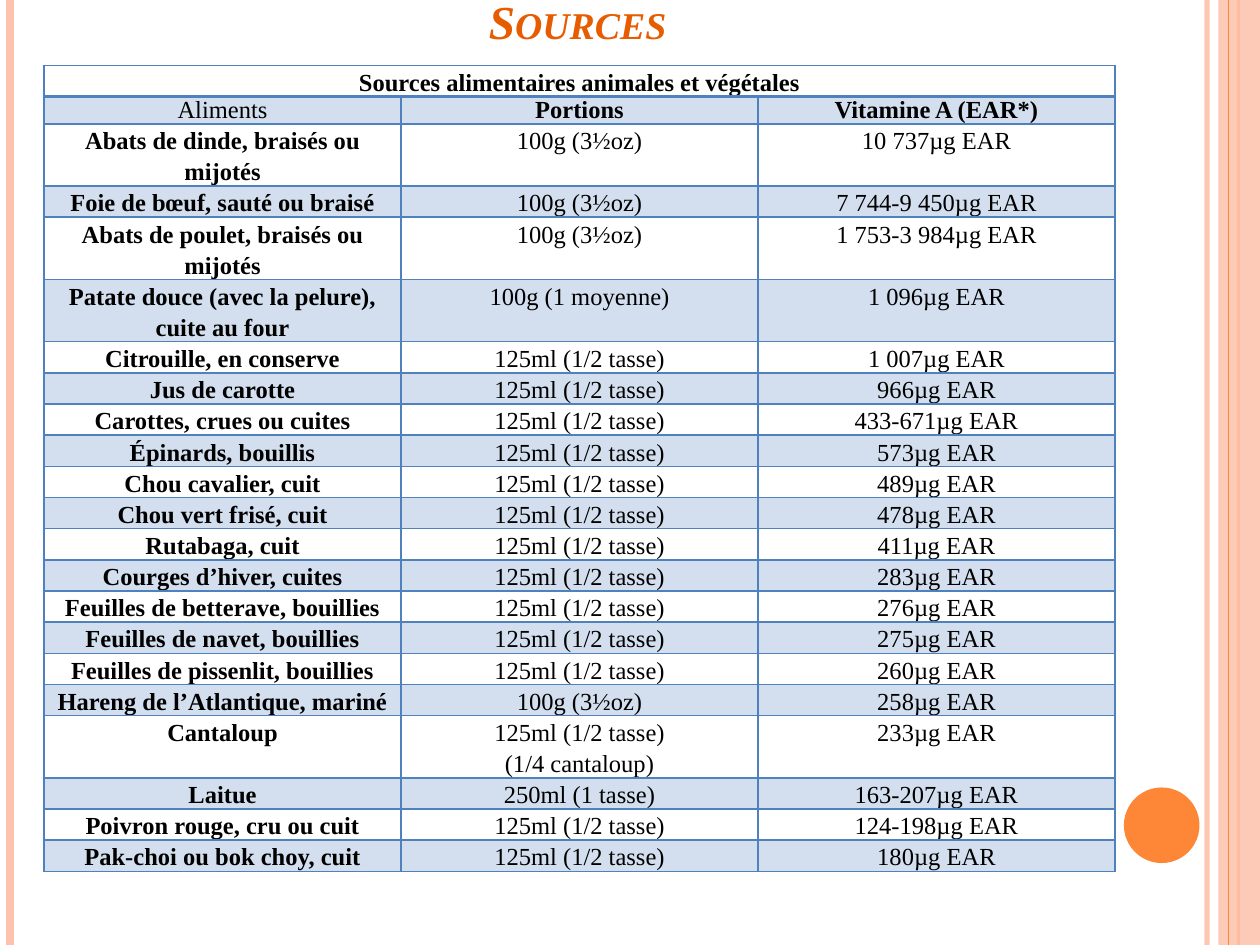
import pptx
import pptx.util
import pptx.dml.color
import pptx.enum.shapes
import pptx.enum.text
import pptx.oxml
import pptx.oxml.ns
from pptx.util import Inches

HALF_CUP = "125ml (1/2 tasse)"
OUNCES = "100g (3½oz)"
CAPTION = "Sources alimentaires animales et végétales"
HEADERS = ("Aliments", "Portions", "Vitamine A (EAR*)")
FOODS = [
    ("Abats de dinde, braisés ou mijotés", OUNCES, "10 737"),
    ("Foie de bœuf, sauté ou braisé", OUNCES, "7 744-9 450"),
    ("Abats de poulet, braisés ou mijotés", OUNCES, "1 753-3 984"),
    ("Patate douce (avec la pelure), cuite au four", "100g (1 moyenne)", "1 096"),
    ("Citrouille, en conserve", HALF_CUP, "1 007"),
    ("Jus de carotte", HALF_CUP, "966"),
    ("Carottes, crues ou cuites", HALF_CUP, "433-671"),
    ("Épinards, bouillis", HALF_CUP, "573"),
    ("Chou cavalier, cuit", HALF_CUP, "489"),
    ("Chou vert frisé, cuit", HALF_CUP, "478"),
    ("Rutabaga, cuit", HALF_CUP, "411"),
    ("Courges d’hiver, cuites", HALF_CUP, "283"),
    ("Feuilles de betterave, bouillies", HALF_CUP, "276"),
    ("Feuilles de navet, bouillies", HALF_CUP, "275"),
    ("Feuilles de pissenlit, bouillies", HALF_CUP, "260"),
    ("Hareng de l’Atlantique, mariné", OUNCES, "258"),
    ("Cantaloup", HALF_CUP + "\n(1/4 cantaloup)", "233"),
    ("Laitue", "250ml (1 tasse)", "163-207"),
    ("Poivron rouge, cru ou cuit", HALF_CUP, "124-198"),
    ("Pak-choi ou bok choy, cuit", HALF_CUP, "180"),
]
TALL_ROWS = {2, 4, 5, 18}


def rgb(value):
    return pptx.dml.color.RGBColor.from_string(value)


class Deck:
    font = "Times New Roman"
    title_color = "E75C01"
    orange = "FE8637"
    peach = "FEC3AE"
    border = "4F81BD"
    band = "D3DFEE"

    def __init__(self):
        self.prs = pptx.Presentation()
        self.prs.slide_width = Inches(10)
        self.prs.slide_height = Inches(7.5)
        self.s = self.prs.slides.add_slide(self.prs.slide_layouts[5])

    def set_alpha(self, shape, percent):
        for clr in shape.element.spPr.iter(pptx.oxml.ns.qn("a:srgbClr")):
            pptx.oxml.ns.qn("a:alpha")
            clr.append(pptx.oxml.parse_xml(
                f'<a:alpha {pptx.oxml.ns.nsdecls("a")} val="{percent * 1000}"/>'))

    def stripe(self, x, color, width, alpha=100):
        c = self.s.shapes.add_connector(
            pptx.enum.shapes.MSO_CONNECTOR.STRAIGHT,
            Inches(x), 0, Inches(x), self.prs.slide_height)
        c.line.color.rgb = rgb(color)
        c.line.width = pptx.util.Pt(width)
        if alpha < 100:
            self.set_alpha(c, alpha)
        c.element.spPr.append(pptx.oxml.parse_xml(
            f'<a:effectLst {pptx.oxml.ns.nsdecls("a")}/>'))

    def shape(self, kind, x, y, w, h, color, alpha=100):
        sp = self.s.shapes.add_shape(kind, Inches(x), Inches(y), Inches(w), Inches(h))
        sp.shadow.inherit = False
        sp.fill.solid()
        sp.fill.fore_color.rgb = rgb(color)
        sp.line.fill.background()
        if alpha < 100:
            self.set_alpha(sp, alpha)

    def run(self, p, text, size, color, bold):
        r = p.add_run()
        r.text = text
        r.font.name = self.font
        r.font.size = pptx.util.Pt(size)
        r.font.bold = bold
        r.font.color.rgb = rgb(color)
        return r

    def title(self, text, x, y, w, h):
        sp = self.s.shapes.title
        sp.left, sp.top, sp.width, sp.height = map(Inches, (x, y, w, h))
        tf = sp.text_frame
        tf.word_wrap = True
        tf.auto_size = pptx.enum.text.MSO_AUTO_SIZE.NONE
        tf.vertical_anchor = pptx.enum.text.MSO_ANCHOR.BOTTOM
        p = tf.paragraphs[0]
        p.alignment = pptx.enum.text.PP_ALIGN.CENTER
        r = self.run(p, text, 27, self.title_color, True)
        r.font.italic = True
        r.font.element.set("cap", "small") if hasattr(r.font, "element") else \
            r._r.get_or_add_rPr().set("cap", "small")

    def borders(self, cell, top=1, bottom=1):
        tc_pr = cell._tc.get_or_add_tcPr()
        for side, width in zip("LRTB", (1, 1, top, bottom)):
            tc_pr.append(pptx.oxml.parse_xml(
                f'<a:ln{side} {pptx.oxml.ns.nsdecls("a")} w="{pptx.util.Pt(width)}">'
                f'<a:solidFill><a:srgbClr val="{self.border}"/></a:solidFill>'
                f'</a:ln{side}>'))

    def cell(self, cell, text, bold, banded, spacing=1.15, after=0, top=1, bottom=1):
        cell.margin_left = cell.margin_right = Inches(0.07)
        cell.margin_top = cell.margin_bottom = 0
        self.borders(cell, top, bottom)
        if banded:
            cell.fill.solid()
            cell.fill.fore_color.rgb = rgb(self.band)
        else:
            cell.fill.background()
        p = cell.text_frame.paragraphs[0]
        p.alignment = pptx.enum.text.PP_ALIGN.CENTER
        p.line_spacing = spacing
        p.space_after = pptx.util.Pt(after)
        for i, line in enumerate(text.split("\n")):
            if i:
                p.add_line_break()
            self.run(p, line, 14, "000000", bold)

    def table(self, x, y, w):
        heights = [0.46 if i in TALL_ROWS else 0.22 for i in range(len(FOODS) + 2)]
        heights[1] = 0.21
        table = self.s.shapes.add_table(
            len(heights), 3, Inches(x), Inches(y), Inches(w), Inches(sum(heights))).table
        table.first_row = table.horz_banding = False
        for row, height in zip(table.rows, heights):
            row.height = Inches(height)
        table.cell(0, 0).merge(table.cell(0, 2))
        self.cell(table.cell(0, 0), CAPTION, True, False, bottom=2.25)
        for col in (1, 2):
            self.borders(table.cell(0, col), bottom=2.25)
        for col, text in enumerate(HEADERS):
            self.cell(table.cell(1, col), text, col > 0, True, spacing=1, top=2.25)
        for row, (food, portion, amount) in enumerate(FOODS, 2):
            for col, text in enumerate((food, portion, amount + "µg EAR")):
                self.cell(table.cell(row, col), text, col == 0, row % 2 == 1, after=10)


def main():
    deck = Deck()
    shapes = pptx.enum.shapes.MSO_SHAPE
    deck.stripe(9.58, deck.peach, 3, 93)
    deck.stripe(0.08, deck.peach, 4.5)
    deck.stripe(9.83, deck.orange, 1.5)
    deck.shape(shapes.RECTANGLE, 9.67, 0, 0.33, 7.5, deck.peach, 87)
    deck.stripe(9.75, deck.orange, 0.75)
    deck.shape(shapes.OVAL, 8.92, 6.25, 0.6, 0.6, deck.orange)
    deck.title("Sources", 0.5, 0.3, 8.17, 0.14)
    deck.table(0.35, 0.52, 8.5)
    deck.prs.save("out.pptx")


if __name__ == "__main__":
    main()
